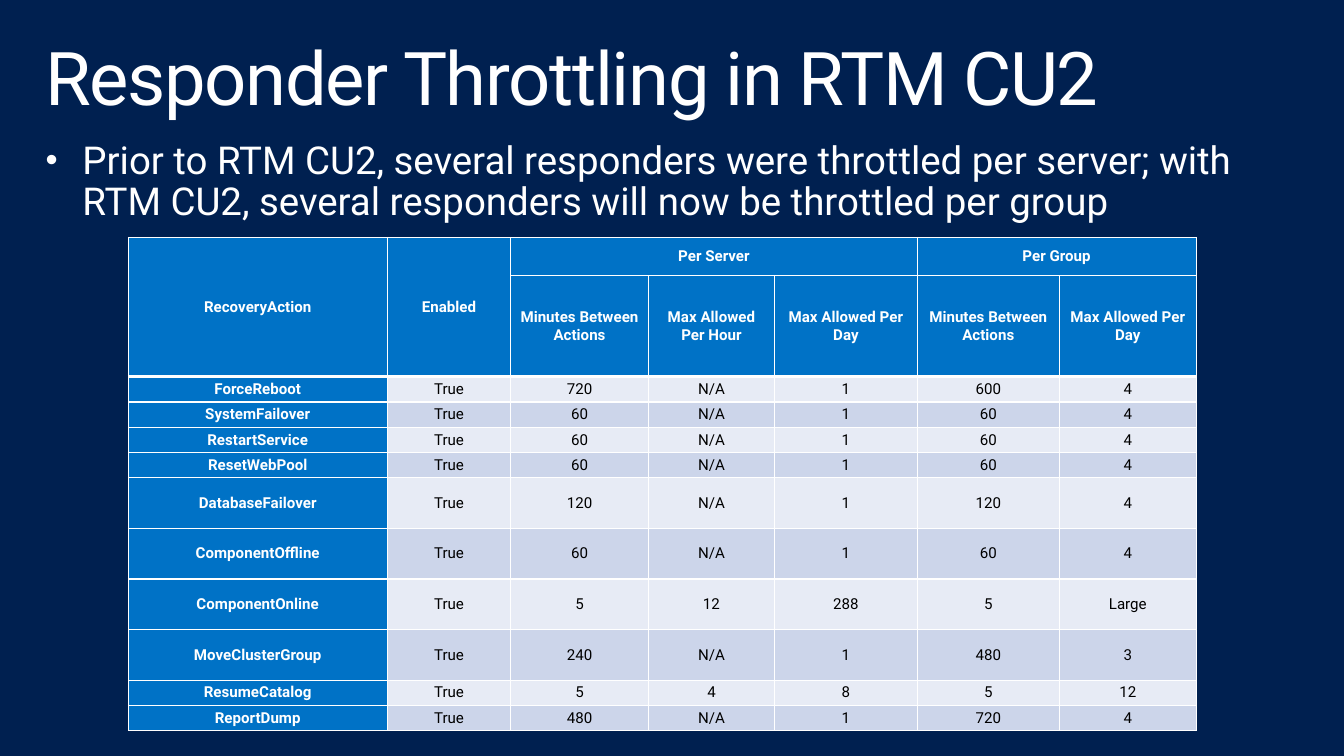
import pptx
import pptx.util
import pptx.dml.color
import pptx.enum.text
import pptx.oxml
import lxml.etree

Cm, Pt = pptx.util.Cm, pptx.util.Pt
RGBColor = pptx.dml.color.RGBColor
ALIGN, ANCHOR = pptx.enum.text.PP_ALIGN, pptx.enum.text.MSO_ANCHOR
FIT = pptx.enum.text.MSO_AUTO_SIZE
NS = "http://schemas.openxmlformats.org/drawingml/2006/main"

NAVY = RGBColor(0x00, 0x20, 0x50)
BLUE = RGBColor(0x00, 0x72, 0xC6)
LIGHT = RGBColor(0xE7, 0xEB, 0xF5)
DARK = RGBColor(0xCC, 0xD5, 0xEA)
WHITE = RGBColor(0xFF, 0xFF, 0xFF)
BLACK = RGBColor(0x00, 0x00, 0x00)

FACE = "Roboto"
TITLE = {"name": FACE, "size": Pt(54), "bold": False}
LIST = {"name": FACE, "size": Pt(28), "bold": False}
HEAD = {"name": FACE, "size": Pt(11), "bold": True}
DATA = {"name": FACE, "size": Pt(11), "bold": False}
FRAME = {"margin_left": Cm(0.41), "margin_right": Cm(0.41),
         "margin_top": Cm(0.25), "margin_bottom": Cm(0.25),
         "word_wrap": True, "auto_size": FIT.NONE,
         "vertical_anchor": ANCHOR.TOP}
CELL = {"margin_left": Cm(0.18), "margin_right": Cm(0.18),
        "margin_top": 0, "margin_bottom": 0,
        "vertical_anchor": ANCHOR.MIDDLE}

COLS = [6.65, 3.18, 3.53, 3.25, 3.66, 3.66, 3.51]
LOW, TALL = 0.65, 1.3
TIMES, DAILY = "Minutes Between Actions", "Max Allowed Per Day"
TOP = [
    ["RecoveryAction", "Enabled", "Per Server", "", "", "Per Group", ""],
    ["", "", TIMES, "Max Allowed Per Hour", DAILY, TIMES, DAILY],
]
SPANS = [(0, 0, 1, 0), (0, 1, 1, 1), (0, 2, 0, 4), (0, 5, 0, 6)]
# Row height, action, then the per-server and per-group limits
ROWS = [
    (LOW, "ForceReboot", "720", "N/A", "1", "600", "4"),
    (LOW, "SystemFailover", "60", "N/A", "1", "60", "4"),
    (LOW, "RestartService", "60", "N/A", "1", "60", "4"),
    (LOW, "ResetWebPool", "60", "N/A", "1", "60", "4"),
    (TALL, "DatabaseFailover", "120", "N/A", "1", "120", "4"),
    (TALL, "ComponentOffline", "60", "N/A", "1", "60", "4"),
    (TALL, "ComponentOnline", "5", "12", "288", "5", "Large"),
    (TALL, "MoveClusterGroup", "240", "N/A", "1", "480", "3"),
    (LOW, "ResumeCatalog", "5", "4", "8", "5", "12"),
    (LOW, "ReportDump", "480", "N/A", "1", "720", "4"),
]


def style(thing, form):
    for key, value in form.items():
        setattr(thing, key, value)


def place(shape, box):
    sides = ("left", "top", "width", "height")
    style(shape, {side: Cm(size) for side, size in zip(sides, box)})


def write(para, text, form, tint, align):
    para.alignment = align
    run = para.add_run()
    run.text = text
    style(run.font, form)
    run.font.color.rgb = tint
    return run


def fill_text(shape, box, text, form):
    place(shape, box)
    style(shape.text_frame, FRAME)
    para = shape.text_frame.paragraphs[0]
    para.line_spacing = 0.9
    return para, write(para, text, form, WHITE, ALIGN.LEFT)


def add_title(slide, box):
    run = fill_text(slide.shapes.title, box,
                    "Responder Throttling in RTM CU2", TITLE)[1]
    run.font._element.set("spc", "-100")


def add_list(slide, box):
    para = fill_text(
        slide.placeholders[1], box,
        "Prior to RTM CU2, several responders were throttled per server; "
        "with RTM CU2, several responders will now be throttled per group",
        LIST)[0]
    # Hanging bullet
    props = para._p.get_or_add_pPr()
    props.set("marL", str(Cm(0.95)))
    props.set("indent", str(-Cm(0.95)))
    for tag, key, value in (("buSzPct", "val", "90000"),
                            ("buFont", "typeface", "Arial"),
                            ("buChar", "char", "•")):
        lxml.etree.SubElement(props, f"{{{NS}}}{tag}").set(key, value)


def add_edges(cell, top, base):
    props = cell._tc.get_or_add_tcPr()
    edges = (("L", 1), ("R", 1), ("T", top), ("B", base))
    for spot, (side, width) in enumerate(edges):
        props.insert(spot, pptx.oxml.parse_xml(
            f'<a:ln{side} xmlns:a="{NS}" w="{Pt(width)}"><a:solidFill>'
            f'<a:srgbClr val="{WHITE}"/></a:solidFill></a:ln{side}>'))


def add_grid(slide, box):
    cells = TOP + [[name, "True", *limits] for _, name, *limits in ROWS]
    highs = [0.99, 2.59] + [row[0] for row in ROWS]
    frame = slide.shapes.add_table(len(cells), len(COLS),
                                   *(Cm(size) for size in box))
    grid = frame.table
    style(grid, {"first_row": False, "horz_banding": False})
    for col, width in zip(grid.columns, COLS):
        col.width = Cm(width)
    for row, high in zip(grid.rows, highs):
        row.height = Cm(high)

    for r, line in enumerate(cells):
        for c, text in enumerate(line):
            cell = grid.cell(r, c)
            style(cell, CELL)
            head = r < 2 or c == 0
            cell.fill.solid()
            band = DARK if r % 2 else LIGHT
            cell.fill.fore_color.rgb = BLUE if head else band
            # Heavy rule between the header and the data
            last = r == 1 or (r == 0 and c < 2)
            add_edges(cell, 3 if r == 2 else 1, 3 if last else 1)
            if text:
                write(cell.text_frame.paragraphs[0], text,
                      HEAD if head else DATA,
                      WHITE if head else BLACK, ALIGN.CENTER)

    for r, c, down, right in SPANS:
        grid.cell(r, c).merge(grid.cell(down, right))


def main():
    deck = pptx.Presentation()
    style(deck, {"slide_width": Cm(34.54), "slide_height": Cm(19.43)})
    slide = deck.slides.add_slide(deck.slide_layouts[1])
    slide.background.fill.solid()
    slide.background.fill.fore_color.rgb = NAVY
    add_title(slide, (0.76, 0.81, 33.02, 2.54))
    add_list(slide, (0.76, 3.38, 33.02, 2.67))
    add_grid(slide, (3.3, 6.1, 27.44, 12.68))
    deck.save("out.pptx")


if __name__ == "__main__":
    main()
